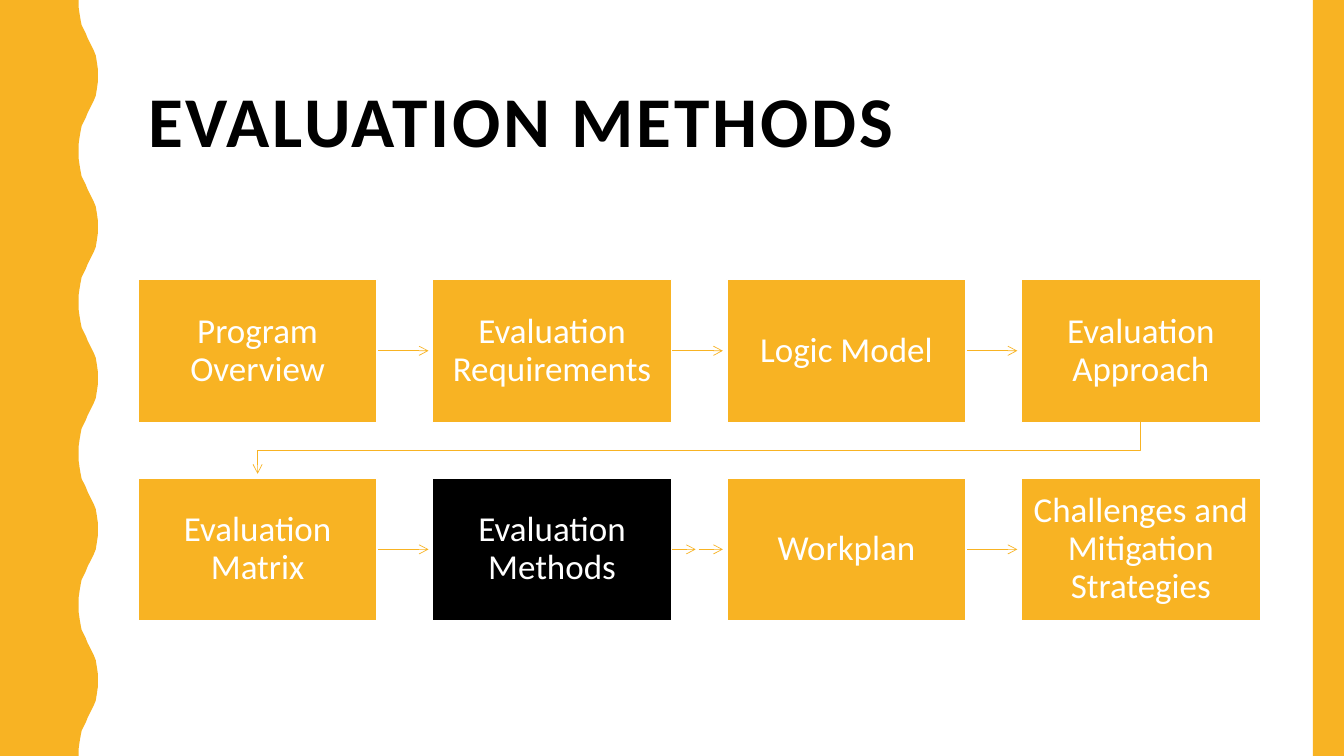
from dataclasses import dataclass

from lxml.etree import SubElement
from pptx import Presentation
from pptx.dml.color import RGBColor
from pptx.enum.shapes import MSO_CONNECTOR, MSO_SHAPE
from pptx.enum.text import MSO_ANCHOR, MSO_AUTO_SIZE, PP_ALIGN
from pptx.oxml.ns import qn
from pptx.util import Inches, Pt

COLORS = {"gold": "F8B323", "black": "000000", "white": "FFFFFF"}
FONT = "Calibri"
WIDTH, HEIGHT = 13.33, 7.5

# Grid of steps, in inches
LEFT, TOP = 1.37, 2.77
COLUMN, ROW = 2.92, 1.97
BOX_WIDTH, BOX_HEIGHT = 2.37, 1.42
ARROW_LENGTH = 0.51
SPLIT_GAP = 0.03

# Wavy edge: x and y from a trough to the next crest
WAVE_COUNT = 5
HALF_WAVE = [
    (0.78, 0), (0.78, 0.07), (0.79, 0.14), (0.8, 0.2), (0.81, 0.25),
    (0.83, 0.29), (0.85, 0.33), (0.87, 0.38), (0.89, 0.42), (0.91, 0.46),
    (0.93, 0.5), (0.95, 0.55), (0.96, 0.61), (0.97, 0.68), (0.97, 0.75),
]


@dataclass(frozen=True)
class Step:
    text: str
    column: int
    row: int
    fill: str = "gold"
    arrow_parts: int = 1

    @property
    def left(self) -> float:
        return LEFT + self.column * COLUMN

    @property
    def top(self) -> float:
        return TOP + self.row * ROW

    @property
    def center(self) -> float:
        return self.left + BOX_WIDTH / 2


STEPS = [
    Step("Program Overview", 0, 0),
    Step("Evaluation Requirements", 1, 0),
    Step("Logic Model", 2, 0),
    Step("Evaluation Approach", 3, 0, arrow_parts=0),
    Step("Evaluation Matrix", 0, 1),
    Step("Evaluation Methods", 1, 1, fill="black", arrow_parts=2),
    Step("Workplan", 2, 1),
    Step("Challenges and Mitigation Strategies", 3, 1, arrow_parts=0),
]


def color(name: str) -> RGBColor:
    return RGBColor.from_string(COLORS[name])


def write_text(shape, text: str, *, size: float, font_color: str, align=PP_ALIGN.LEFT,
               bold: bool = False, inset: float = 0.1, spacing: float = 0) -> None:
    frame = shape.text_frame
    frame.word_wrap = True
    frame.auto_size = MSO_AUTO_SIZE.NONE
    frame.vertical_anchor = MSO_ANCHOR.MIDDLE
    frame.margin_left = frame.margin_right = Inches(inset)
    paragraph = frame.paragraphs[0]
    paragraph.alignment = align
    paragraph.line_spacing = 0.9
    run = paragraph.add_run()
    run.text = text
    run.font.name = FONT
    run.font.size = Pt(size)
    run.font.bold = bold
    run.font.color.rgb = color(font_color)
    if spacing:
        run.font._element.set("spc", str(round(spacing * 100)))


def fill_plain(shape, fill: str) -> None:
    shape.shadow.inherit = False
    shape.fill.solid()
    shape.fill.fore_color.rgb = color(fill)
    shape.line.fill.background()


def add_rectangle(slide, left: float, top: float, width: float, height: float, fill: str):
    shape = slide.shapes.add_shape(MSO_SHAPE.RECTANGLE, Inches(left), Inches(top),
                                   Inches(width), Inches(height))
    fill_plain(shape, fill)
    return shape


def add_outline(slide, points: list[tuple[float, float]], close: bool):
    """Join points given in inches; the builder keeps only whole units."""
    start, *others = [(Inches(x), Inches(y)) for x, y in points]
    builder = slide.shapes.build_freeform(*start)
    builder.add_line_segments(others, close=close)
    return builder.convert_to_shape()


def format_arrow(shape) -> None:
    """Give a line its colour, width and open head at its end."""
    shape.line.color.rgb = color("gold")
    shape.line.width = Pt(0.5)
    SubElement(shape.line._get_or_add_ln(), qn("a:tailEnd"), type="arrow")


def add_arrow(slide, start: float, end: float, y: float) -> None:
    connector = slide.shapes.add_connector(MSO_CONNECTOR.STRAIGHT, Inches(start), Inches(y),
                                           Inches(end), Inches(y))
    format_arrow(connector)
    SubElement(connector._element.spPr, qn("a:effectLst"))


def add_step(slide, step: Step) -> None:
    """Draw a box and the arrow, whole or split, that leads to the next one."""
    right = step.left + BOX_WIDTH
    for part in range(step.arrow_parts):
        length = (ARROW_LENGTH - SPLIT_GAP * (step.arrow_parts - 1)) / step.arrow_parts
        start = right + part * (length + SPLIT_GAP)
        add_arrow(slide, start, start + length, step.top + BOX_HEIGHT / 2)
    box = add_rectangle(slide, step.left, step.top, BOX_WIDTH, BOX_HEIGHT, step.fill)
    box.line.color.rgb = color("white")
    box.line.width = Pt(1)
    write_text(box, step.text, size=25, font_color="white", align=PP_ALIGN.CENTER, inset=0.11)


def add_row_return(slide, source: Step, target: Step) -> None:
    """Lead from the end of one row to the start of the next."""
    bottom = source.top + BOX_HEIGHT
    middle = (bottom + target.top) / 2
    points = [(source.center, bottom), (source.center, middle),
              (target.center, middle), (target.center, target.top - 0.04)]
    line = add_outline(slide, points, close=False)
    line.shadow.inherit = False
    line.fill.background()
    format_arrow(line)


def add_wave(slide) -> None:
    period = HEIGHT / WAVE_COUNT
    falling = [(x, period - y) for x, y in reversed(HALF_WAVE[1:-1])]
    edge = [(x, y + index * period) for index in range(WAVE_COUNT)
            for x, y in HALF_WAVE + falling]
    points = [(0, 0), *edge, (HALF_WAVE[0][0], HEIGHT), (0, HEIGHT)]
    fill_plain(add_outline(slide, points, close=True), "gold")


def main() -> None:
    presentation = Presentation()
    presentation.slide_width = Inches(WIDTH)
    presentation.slide_height = Inches(HEIGHT)
    slide = presentation.slides.add_slide(presentation.slide_layouts[5])
    slide.background.fill.solid()
    slide.background.fill.fore_color.rgb = color("white")

    title = slide.shapes.title
    title.left, title.top = Inches(LEFT), Inches(0.42)
    title.width, title.height = Inches(11.13), Inches(1.63)
    write_text(title, "EVALUATION METHODS", size=51, font_color="black", bold=True, spacing=2)

    add_wave(slide)
    add_rectangle(slide, 13.02, 0, WIDTH - 13.02, HEIGHT, "gold")
    for step in STEPS:
        add_step(slide, step)
    add_row_return(slide, STEPS[3], STEPS[4])
    presentation.save("out.pptx")


if __name__ == "__main__":
    main()
